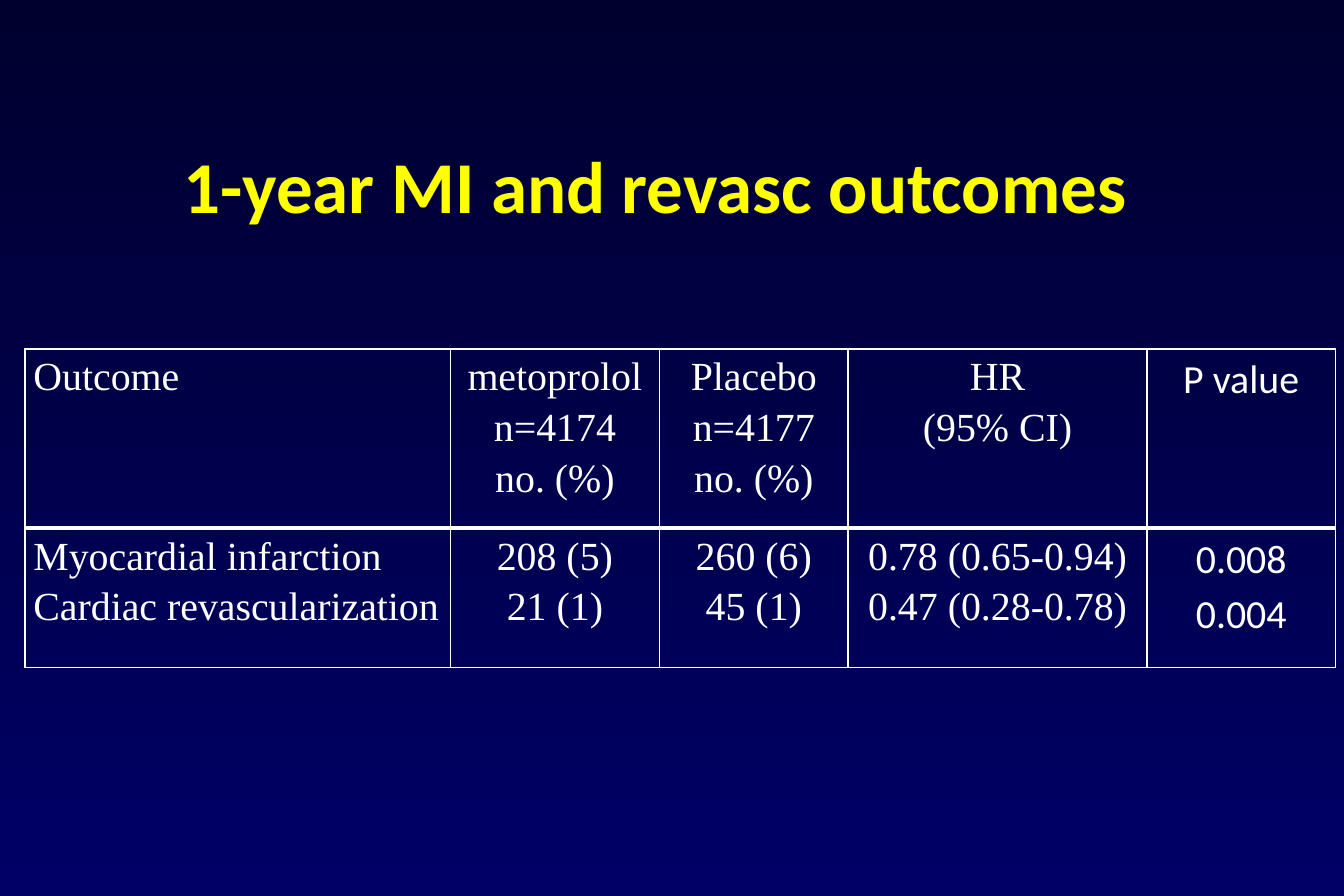
from dataclasses import dataclass

from lxml.etree import SubElement
from pptx import Presentation
from pptx.dml.color import RGBColor
from pptx.enum.text import MSO_ANCHOR, PP_ALIGN
from pptx.oxml.ns import qn
from pptx.util import Inches, Pt


@dataclass(frozen=True)
class Theme:
    top: str = "00002F"
    bottom: str = "000066"
    title: str = "FFFF00"
    text: str = "FFFFFF"
    title_size: int = 44
    table_size: int = 24
    sans: str = "Calibri"
    serif: str = "Times New Roman"
    thin: int = 1
    thick: int = 3


THEME = Theme()

COLUMN_WIDTHS = [3.56, 1.75, 1.58, 2.5, 1.58]
ROW_HEIGHTS = [1.5, 1.17]
OUTCOMES = [
    [
        ["Outcome"],
        ["metoprolol", "n=4174", "no. (%)"],
        ["Placebo", "n=4177", "no. (%)"],
        ["HR", "(95% CI)"],
        ["P value"],
    ],
    [
        ["Myocardial infarction", "Cardiac revascularization"],
        ["208 (5)", "21 (1)"],
        ["260 (6)", "45 (1)"],
        ["0.78 (0.65-0.94)", "0.47 (0.28-0.78)"],
        ["0.008", "0.004"],
    ],
]


def style_font(font, name, size, color, bold=False):
    font.name = name
    font.size = Pt(size)
    font.bold = bold
    font.color.rgb = RGBColor.from_string(color)


def paint_background(page):
    fill = page.background.fill
    fill.gradient()
    fill.gradient_angle = 270
    for stop, color in zip(fill.gradient_stops, (THEME.top, THEME.bottom)):
        stop.color.rgb = RGBColor.from_string(color)


def place_title(page, box, text):
    title = page.shapes.title
    title.left, title.top, title.width, title.height = map(Inches, box)
    frame = title.text_frame
    frame.word_wrap = True
    frame.vertical_anchor = MSO_ANCHOR.MIDDLE
    para = frame.paragraphs[0]
    para.text = text
    para.alignment = PP_ALIGN.CENTER
    style_font(para.font, THEME.sans, THEME.title_size, THEME.title, True)


def draw_borders(cell, top, bottom):
    properties = cell._tc.get_or_add_tcPr()
    widths = {"L": THEME.thin, "R": THEME.thin, "T": top, "B": bottom}
    for side, width in widths.items():
        line = SubElement(properties, qn(f"a:ln{side}"), w=str(Pt(width)))
        fill = SubElement(line, qn("a:solidFill"))
        SubElement(fill, qn("a:srgbClr"), val=THEME.text)


def fill_cell(cell, lines, font_name, alignment):
    cell.fill.background()
    cell.margin_left = cell.margin_right = Inches(0.07)
    cell.margin_top = cell.margin_bottom = 0
    cell.vertical_anchor = MSO_ANCHOR.TOP
    frame = cell.text_frame
    frame.text = "\n".join(lines)
    for para in frame.paragraphs:
        para.alignment = alignment
        para.line_spacing = 1.15
        style_font(para.font, font_name, THEME.table_size, THEME.text)


def place_outcome_table(page, box):
    row_count, column_count = len(ROW_HEIGHTS), len(COLUMN_WIDTHS)
    table = page.shapes.add_table(row_count, column_count, *map(Inches, box)).table
    table.first_row = table.horz_banding = False
    for column, width in zip(table.columns, COLUMN_WIDTHS):
        column.width = Inches(width)
    for row, height in zip(table.rows, ROW_HEIGHTS):
        row.height = Inches(height)
    for row_index, row in enumerate(OUTCOMES):
        top = THEME.thick if row_index else THEME.thin
        bottom = THEME.thin if row_index else THEME.thick
        for column_index, lines in enumerate(row):
            cell = table.cell(row_index, column_index)
            is_p_value = column_index == column_count - 1
            draw_borders(cell, top, bottom)
            fill_cell(
                cell,
                lines,
                THEME.sans if is_p_value else THEME.serif,
                PP_ALIGN.CENTER if column_index else PP_ALIGN.LEFT,
            )


def main():
    deck = Presentation()
    deck.slide_width, deck.slide_height = Inches(11.25), Inches(7.5)
    page = deck.slides.add_slide(deck.slide_layouts[5])
    paint_background(page)
    place_title(page, (0.71, 1, 9.56, 1.08), "1-year MI and revasc outcomes")
    place_outcome_table(page, (0.21, 2.92, sum(COLUMN_WIDTHS), sum(ROW_HEIGHTS)))
    deck.save("out.pptx")


if __name__ == "__main__":
    main()
